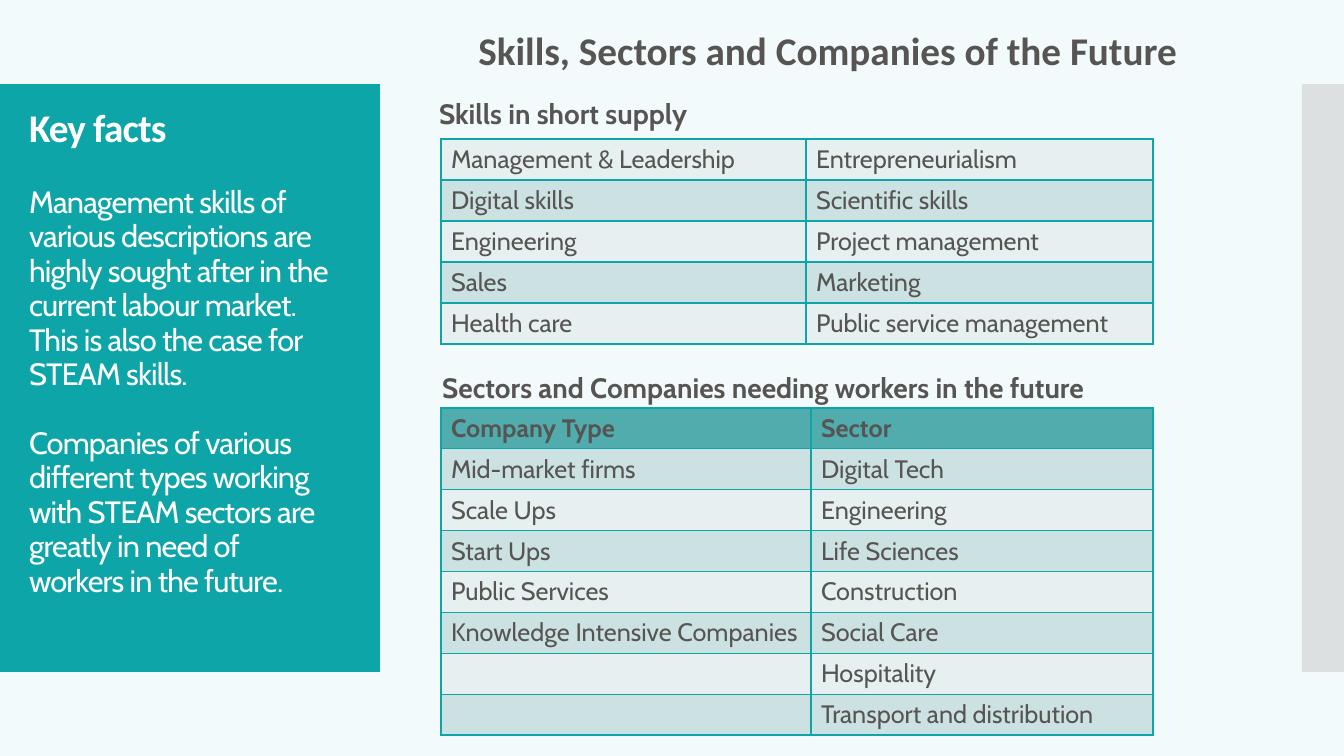
from dataclasses import dataclass

from lxml import etree
from pptx import Presentation
from pptx.dml.color import RGBColor
from pptx.enum.shapes import MSO_SHAPE
from pptx.enum.text import MSO_ANCHOR, MSO_AUTO_SIZE, PP_ALIGN
from pptx.oxml.ns import qn
from pptx.slide import Slide
from pptx.util import Emu, Pt

RECTANGLE = MSO_SHAPE.RECTANGLE
MIDDLE, TOP = MSO_ANCHOR.MIDDLE, MSO_ANCHOR.TOP
LEFT, CENTER = PP_ALIGN.LEFT, PP_ALIGN.CENTER
NO_AUTOFIT = MSO_AUTO_SIZE.NONE

SLIDE_WIDTH, SLIDE_HEIGHT = 1344, 756
EMU_PER_PX = 12192000 / SLIDE_WIDTH

TEAL = RGBColor(0x0D, 0xA5, 0xA8)
HEADER_TEAL = RGBColor(0x51, 0xAC, 0xAE)
BAND_DARK = RGBColor(0xCC, 0xE1, 0xE1)
BAND_LIGHT = RGBColor(0xE7, 0xF0, 0xF1)
BACKGROUND = RGBColor(0xF3, 0xFA, 0xFB)
GREY = RGBColor(0xDD, 0xE0, 0xE1)
TEXT_GREY = RGBColor(0x57, 0x55, 0x53)
WHITE = RGBColor(0xFF, 0xFF, 0xFF)

LINE_HEIGHT = Pt(24.6)
BODY_FONT, TITLE_FONT = "Cabin", "Calibri"


@dataclass
class Box:
    left: int
    top: int
    width: int
    height: int

    def emu(self) -> list[Emu]:
        return [px(n) for n in (self.left, self.top, self.width, self.height)]


@dataclass
class Panel:
    box: Box
    color: RGBColor


@dataclass
class Style:
    font: str
    size: int
    color: RGBColor
    bold: bool = False


@dataclass
class Block:
    """Paragraphs for one placeholder of the layout."""
    placeholder: int
    box: Box
    paragraphs: list[tuple[str, Style]]
    anchor: MSO_ANCHOR = MIDDLE
    align: PP_ALIGN = LEFT
    line_spacing: float | Pt = 0.9
    space_before: Pt = Pt(12)
    tracking: int = 0


@dataclass
class Grid:
    box: Box
    first_column: int
    rows: list[tuple[str, str]]
    has_header: bool = False


TITLE = Style(TITLE_FONT, 28, TEXT_GREY, True)
HEADING = Style(BODY_FONT, 20, TEXT_GREY, True)
FACTS_TITLE = Style(TITLE_FONT, 28, WHITE, True)
FACTS = Style(BODY_FONT, 22, WHITE)
CELL = Style(BODY_FONT, 18, TEXT_GREY)
HEADER_CELL = Style(BODY_FONT, 18, TEXT_GREY, True)

PANELS = [
    Panel(Box(0, 84, 380, 588), TEAL),
    Panel(Box(1302, 84, 42, 588), GREY),
]

BLOCKS = [
    Block(0, Box(426, 21, 803, 57),
          [("Skills, Sectors and Companies of the Future", TITLE)],
          TOP, CENTER, 1.0, Pt(0)),
    Block(1, Box(429, 82, 806, 66), [("Skills in short supply", HEADING)]),
    Block(2, Box(19, 111, 325, 507), [
        ("Key facts", FACTS_TITLE),
        ("Management skills of various descriptions are highly sought after in the "
         "current labour market. This is also the case for STEAM skills.", FACTS),
        ("Companies of various different types working with STEAM sectors are "
         "greatly in need of workers in the future.", FACTS),
    ], TOP, LEFT, LINE_HEIGHT, LINE_HEIGHT, -60),
    Block(3, Box(432, 336, 806, 107),
          [("Sectors and Companies needing workers in the future", HEADING)]),
]

GRIDS = [
    Grid(Box(441, 139, 712, 205), 365, [
        ("Management & Leadership", "Entrepreneurialism"),
        ("Digital skills", "Scientific skills"),
        ("Engineering", "Project management"),
        ("Sales", "Marketing"),
        ("Health care", "Public service management"),
    ]),
    Grid(Box(441, 408, 712, 327), 370, [
        ("Company Type", "Sector"),
        ("Mid-market firms", "Digital Tech"),
        ("Scale Ups", "Engineering"),
        ("Start Ups", "Life Sciences"),
        ("Public Services", "Construction"),
        ("Knowledge Intensive Companies", "Social Care"),
        ("", "Hospitality"),
        ("", "Transport and distribution"),
    ], has_header=True),
]


def px(length: float) -> Emu:
    return Emu(round(length * EMU_PER_PX))


def apply_style(para, style: Style) -> None:
    font = para.font
    font.name, font.size, font.bold = style.font, Pt(style.size), style.bold
    font.color.rgb = style.color


def add_panel(slide: Slide, panel: Panel) -> None:
    """Draw a plain rectangle behind the placeholders."""
    shape = slide.shapes.add_shape(RECTANGLE, *panel.box.emu())
    shape.shadow.inherit = False
    shape.fill.solid()
    shape.fill.fore_color.rgb = panel.color
    shape.line.fill.background()
    slide.shapes.element.insert(2, shape.element)


def fill_placeholder(slide: Slide, block: Block) -> None:
    holder = slide.placeholders[block.placeholder]
    holder.left, holder.top, holder.width, holder.height = block.box.emu()
    frame = holder.text_frame
    frame.word_wrap = True
    frame.auto_size = NO_AUTOFIT
    frame.vertical_anchor = block.anchor
    for index, (text, style) in enumerate(block.paragraphs):
        para = frame.add_paragraph() if index else frame.paragraphs[0]
        para.text = text
        apply_style(para, style)
        para.alignment = block.align
        para.line_spacing = block.line_spacing
        first_fact = index == 0 and block.anchor == TOP
        para.space_before = Pt(0) if first_fact else block.space_before
        properties = para._p.get_or_add_pPr()
        properties.set("marL", "0")
        properties.set("indent", "0")
        defaults = properties.find(qn("a:defRPr"))
        defaults.set("spc", str(block.tracking))
        defaults.addprevious(etree.Element(qn("a:buNone")))


def add_borders(cell) -> None:
    properties = cell._tc.get_or_add_tcPr()
    for side in ("lnL", "lnR", "lnT", "lnB"):
        line = etree.SubElement(properties, qn(f"a:{side}"), w=str(Pt(1)))
        fill = etree.SubElement(line, qn("a:solidFill"))
        etree.SubElement(fill, qn("a:srgbClr"), val=str(TEAL))


def add_grid(slide: Slide, grid: Grid) -> None:
    table = slide.shapes.add_table(len(grid.rows), 2, *grid.box.emu()).table
    table.first_row = grid.has_header
    table.horz_banding = False
    table.columns[0].width = px(grid.first_column)
    table.columns[1].width = px(grid.box.width - grid.first_column)
    for row_index, texts in enumerate(grid.rows):
        table.rows[row_index].height = px(grid.box.height / len(grid.rows))
        is_header = grid.has_header and row_index == 0
        band = BAND_DARK if row_index % 2 else BAND_LIGHT
        for column_index, text in enumerate(texts):
            cell = table.cell(row_index, column_index)
            cell.text = text
            apply_style(cell.text_frame.paragraphs[0], HEADER_CELL if is_header else CELL)
            add_borders(cell)
            cell.fill.solid()
            cell.fill.fore_color.rgb = HEADER_TEAL if is_header else band


def main() -> None:
    deck = Presentation()
    deck.slide_width, deck.slide_height = px(SLIDE_WIDTH), px(SLIDE_HEIGHT)
    comparison_layout = deck.slide_layouts[4]
    slide = deck.slides.add_slide(comparison_layout)
    slide.background.fill.solid()
    slide.background.fill.fore_color.rgb = BACKGROUND
    for panel in PANELS:
        add_panel(slide, panel)
    for block in BLOCKS:
        fill_placeholder(slide, block)
    for grid in GRIDS:
        add_grid(slide, grid)
    unused = slide.placeholders[4].element
    unused.getparent().remove(unused)
    deck.save("out.pptx")


if __name__ == "__main__":
    main()
